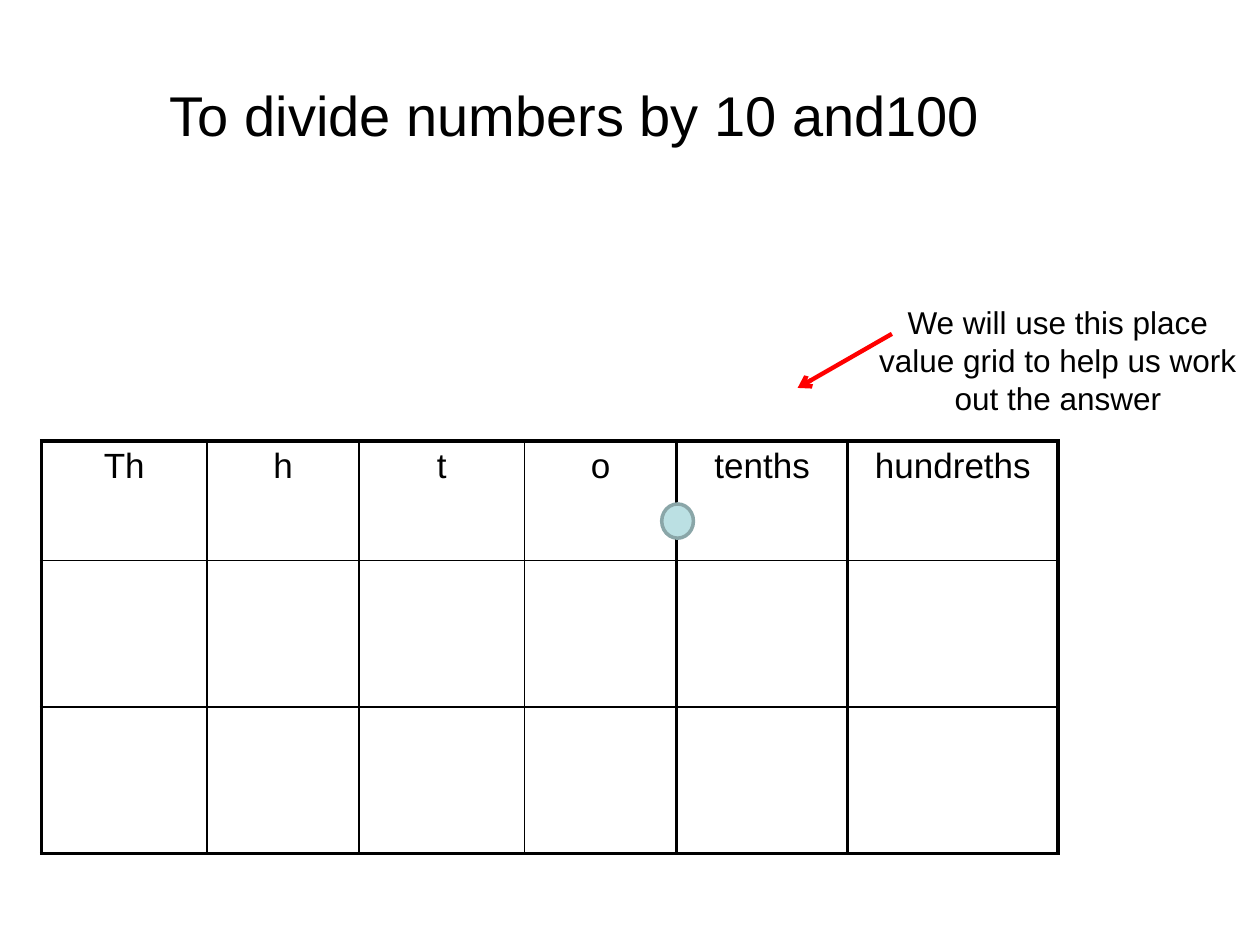
"""Build a place value grid slide for dividing by 10 and 100."""
import pptx
import pptx.dml.color
import pptx.enum.shapes
import pptx.enum.text
import pptx.oxml
import pptx.oxml.ns
import pptx.util
import lxml.etree

Cm = pptx.util.Cm
Pt = pptx.util.Pt
COLORS = {"ink": "000000", "arrow": "FF0000", "point": "BBE0E3", "point_edge": "8AA6A8"}
RGB = {k: pptx.dml.color.RGBColor.from_string(v) for k, v in COLORS.items()}


def write(tf, text, size):
    p = tf.paragraphs[0]
    p.alignment = pptx.enum.text.PP_ALIGN.CENTER
    r = p.add_run()
    r.text = text
    for name, value in {"size": Pt(size), "name": "Arial"}.items():
        setattr(r.font, name, value)
    r.font.color.rgb = RGB["ink"]


def border(cell, index, side, width):
    ln = pptx.oxml.parse_xml(
        f'<a:ln{side} {pptx.oxml.ns.nsdecls("a")} w="{Pt(width)}"><a:solidFill>'
        f'<a:srgbClr val="{COLORS["ink"]}"/></a:solidFill></a:ln{side}>')
    cell._tc.get_or_add_tcPr().insert(index, ln)


prs = pptx.Presentation()
for name, value in {"slide_width": Cm(25.4), "slide_height": Cm(19.05)}.items():
    setattr(prs, name, value)
s = prs.slides.add_slide(prs.slide_layouts[6])

texts = [
    ("To divide numbers by 10 and100 ", 32, (0.64, 1.5, 22.22, 1.63)),
    ("We will use this place value grid to help us work out the answer", 18,
     (17.3, 5.99, 8.05, 2.57)),
]
for text, size, box in texts:
    tf = s.shapes.add_textbox(*map(Cm, box)).text_frame
    tf.word_wrap = True
    write(tf, text, size)

headings = ["Th", "h", "t", "o", "tenths", "hundreths"]
widths = [3.33, 3.07, 3.33, 3.07, 3.45, 4.24]
heights = [2.41, 2.95, 2.95]
table = s.shapes.add_table(len(heights), len(widths), Cm(0.84), Cm(8.89),
                           Cm(sum(widths)), Cm(sum(heights))).table
for name, value in {"first_row": False, "horz_banding": False}.items():
    setattr(table, name, value)
for column, width in zip(table.columns, widths):
    column.width = Cm(width)
for row, height in zip(table.rows, heights):
    row.height = Cm(height)

for i in range(len(heights)):
    for j, heading in enumerate(headings):
        cell = table.cell(i, j)
        cell.fill.background()
        heavy = {"L": j == 0 or j > 3, "R": j >= 3,
                 "T": i == 0, "B": i == len(heights) - 1}
        for index, (side, thick) in enumerate(heavy.items()):
            border(cell, index, side, 2.25 if thick else 1)
        if i == 0:
            write(cell.text_frame, heading, 20)

arrow = s.shapes.add_connector(pptx.enum.shapes.MSO_CONNECTOR.STRAIGHT,
                               Cm(17.98), Cm(6.73), Cm(16.08), Cm(7.82))
arrow.line.color.rgb = RGB["arrow"]
arrow.line.width = Pt(2.5)
qn = pptx.oxml.ns.qn
lxml.etree.SubElement(arrow.line._get_or_add_ln(), qn("a:tailEnd"), type="arrow")
lxml.etree.SubElement(arrow._element.spPr, qn("a:effectLst"))

sp = s.shapes.add_shape(pptx.enum.shapes.MSO_SHAPE.OVAL,
                        Cm(13.34), Cm(10.16), Cm(0.64), Cm(0.69))
sp.shadow.inherit = False
sp.fill.solid()
sp.fill.fore_color.rgb = RGB["point"]
sp.line.color.rgb = RGB["point_edge"]
sp.line.width = Pt(2)

prs.save("out.pptx")
